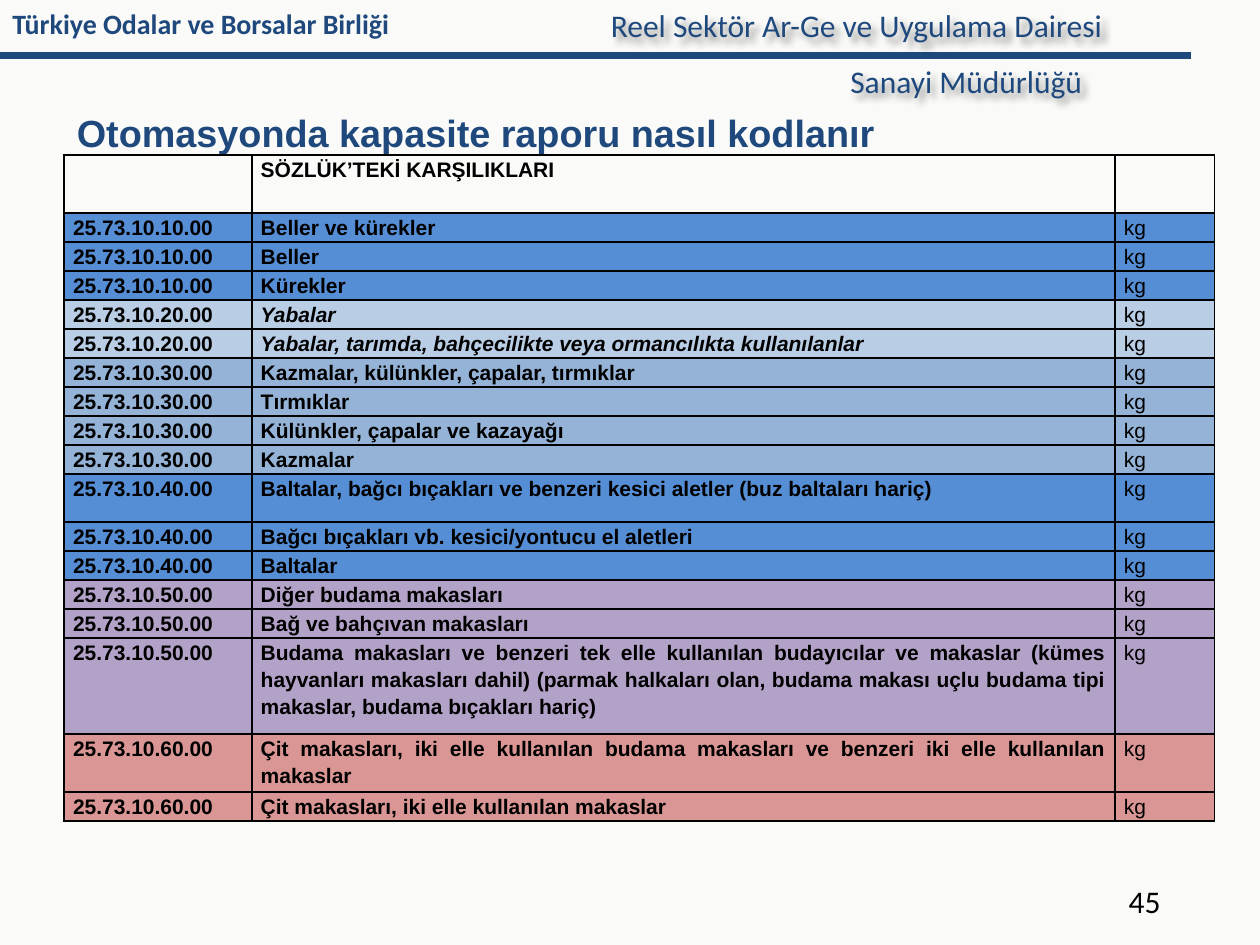
"""Build the slide that lists the dictionary codes of a capacity report."""
import lxml.etree
import pptx
import pptx.dml.color
import pptx.enum.shapes
import pptx.enum.text
import pptx.oxml
import pptx.oxml.ns
import pptx.util

Inches = pptx.util.Inches
ALIGN = pptx.enum.text.PP_ALIGN
ANCHOR = pptx.enum.text.MSO_ANCHOR
AUTO_SIZE = pptx.enum.text.MSO_AUTO_SIZE

COLORS = {
    "background": "FAFAF9", "navy": "1F497D", "black": "000000",
    "blue": "558ED5", "pale": "B9CDE5", "steel": "95B3D7",
    "purple": "B3A2C7", "rose": "D99694",
}
COLUMN_WIDTHS = [1.49, 6.85, 0.79]
ROW_HEIGHT = 0.23
TABLE_HEADING = "SÖZLÜK’TEKİ KARŞILIKLARI"
UNIT = "kg"
GROUPS = [
    ("25.73.10.10.00", "blue", False, ["Beller ve kürekler", "Beller", "Kürekler"]),
    ("25.73.10.20.00", "pale", True, [
        "Yabalar",
        "Yabalar, tarımda, bahçecilikte veya ormancılıkta kullanılanlar"]),
    ("25.73.10.30.00", "steel", False, [
        "Kazmalar, külünkler, çapalar, tırmıklar", "Tırmıklar",
        "Külünkler, çapalar ve kazayağı", "Kazmalar"]),
    ("25.73.10.40.00", "blue", False, [
        "Baltalar, bağcı bıçakları ve benzeri kesici aletler (buz baltaları hariç)",
        "Bağcı bıçakları vb. kesici/yontucu el aletleri", "Baltalar"]),
    ("25.73.10.50.00", "purple", False, [
        "Diğer budama makasları", "Bağ ve bahçıvan makasları",
        "Budama makasları ve benzeri tek elle kullanılan budayıcılar ve makaslar "
        "(kümes hayvanları makasları dahil) (parmak halkaları olan, budama makası "
        "uçlu budama tipi makaslar, budama bıçakları hariç)"]),
    ("25.73.10.60.00", "rose", False, [
        "Çit makasları, iki elle kullanılan budama makasları ve benzeri iki elle "
        "kullanılan makaslar",
        "Çit makasları, iki elle kullanılan makaslar"]),
]
TALL_ROWS = {0: 0.46, 10: 0.38, 15: 0.76, 16: 0.46}


class SlideBuilder:
    """Hold the style and the current slide, and add elements to it."""

    def __init__(self, presentation):
        self.slide = presentation.slides.add_slide(presentation.slide_layouts[5])
        fill = self.slide.background.fill
        fill.solid()
        fill.fore_color.rgb = self.color("background")

    def color(self, name):
        return pptx.dml.color.RGBColor.from_string(COLORS[name])

    def styled_run(self, paragraph, text, color="black", **font_values):
        run = paragraph.add_run()
        run.text = text
        run.font.color.rgb = self.color(color)
        for name, value in font_values.items():
            setattr(run.font, name, value)

    def title(self, text, left, top, width, height):
        shape = self.slide.shapes.title
        box = {"left": left, "top": top, "width": width, "height": height}
        for name, value in box.items():
            setattr(shape, name, Inches(value))
        frame = shape.text_frame
        frame_values = {"vertical_anchor": ANCHOR.BOTTOM, "margin_bottom": 0,
                        "word_wrap": True, "auto_size": AUTO_SIZE.NONE}
        for name, value in frame_values.items():
            setattr(frame, name, value)
        paragraph = frame.paragraphs[0]
        paragraph.alignment = ALIGN.LEFT
        paragraph.line_spacing = 1.15
        self.styled_run(paragraph, text, "navy", name="Arial",
                        size=pptx.util.Pt(21.6), bold=True)

    def text(self, text, left, top, width, height, color="navy", size=18,
             bold=False, shadow=False):
        shape = self.slide.shapes.add_textbox(
            Inches(left), Inches(top), Inches(width), Inches(height))
        frame = shape.text_frame
        frame.word_wrap = True
        frame.auto_size = AUTO_SIZE.SHAPE_TO_FIT_TEXT
        self.styled_run(frame.paragraphs[0], text, color, name="Calibri",
                        size=pptx.util.Pt(size), bold=bold)
        if shadow:
            self.add_shadow(shape)

    def add_shadow(self, shape):
        shape.shadow.inherit = False
        effects = shape.element.spPr.find(pptx.oxml.ns.qn("a:effectLst"))
        effects.append(pptx.oxml.parse_xml(
            f'<a:outerShdw {pptx.oxml.ns.nsdecls("a")} blurRad="50800" '
            'dist="50800" dir="2700000" algn="tl" rotWithShape="0">'
            f'<a:srgbClr val="{COLORS["black"]}"><a:alpha val="40000"/>'
            '</a:srgbClr></a:outerShdw>'))

    def line(self, start_x, start_y, end_x, end_y, width):
        connector = self.slide.shapes.add_connector(
            pptx.enum.shapes.MSO_CONNECTOR.STRAIGHT, Inches(start_x),
            Inches(start_y), Inches(end_x), Inches(end_y))
        connector.line.color.rgb = self.color("navy")
        connector.line.width = pptx.util.Pt(width)
        lxml.etree.SubElement(connector.element.spPr,
                              pptx.oxml.ns.qn("a:effectLst"))

    def add_borders(self, cell):
        properties = cell._tc.get_or_add_tcPr()
        for side in ("lnL", "lnR", "lnT", "lnB"):
            properties.append(pptx.oxml.parse_xml(
                f'<a:{side} {pptx.oxml.ns.nsdecls("a")} w="12700"><a:solidFill>'
                f'<a:srgbClr val="{COLORS["black"]}"/></a:solidFill></a:{side}>'))

    def cell(self, cell, text, fill, alignment, **font_values):
        margins = {"margin_left": 0.07, "margin_right": 0.07,
                   "margin_top": 0, "margin_bottom": 0}
        for name, value in margins.items():
            setattr(cell, name, Inches(value))
        self.add_borders(cell)
        if fill:
            cell.fill.solid()
            cell.fill.fore_color.rgb = self.color(fill)
        else:
            cell.fill.background()
        paragraph = cell.text_frame.paragraphs[0]
        paragraph.alignment = alignment
        paragraph.line_spacing = 1.15
        if text:
            self.styled_run(paragraph, text, name="Arial",
                            size=pptx.util.Pt(12), **font_values)

    def table(self, left, top):
        rows = [(("", TABLE_HEADING, ""), None, False, ALIGN.LEFT)]
        for code, fill, italic, names in GROUPS:
            rows += [((code, name, UNIT), fill, italic, ALIGN.JUSTIFY)
                     for name in names]
        heights = [TALL_ROWS.get(index, ROW_HEIGHT) for index in range(len(rows))]
        table = self.slide.shapes.add_table(
            len(rows), len(COLUMN_WIDTHS), Inches(left), Inches(top),
            Inches(sum(COLUMN_WIDTHS)), Inches(sum(heights))).table
        table.first_row = False
        table.horz_banding = False
        for column, width in zip(table.columns, COLUMN_WIDTHS):
            column.width = Inches(width)
        for row, height, (texts, fill, italic, alignment) in zip(
                table.rows, heights, rows):
            row.height = Inches(height)
            for index, (cell, text) in enumerate(zip(row.cells, texts)):
                self.cell(cell, text, fill, alignment, bold=index < 2,
                          italic=italic and index == 1)


def main():
    presentation = pptx.Presentation()
    presentation.slide_width = Inches(10)
    presentation.slide_height = Inches(7.5)
    builder = SlideBuilder(presentation)
    builder.line(0, 0.44, 9.45, 0.44, 4)
    builder.text("Türkiye Odalar ve Borsalar Birliği", 0, 0, 8.15, 0.37,
                 size=16, bold=True)
    builder.title("Otomasyonda kapasite raporu nasıl kodlanır", 0.51, 0.76, 9, 0.47)
    builder.text("45", 8.86, 6.95, 0.64, 0.4, color="black")
    builder.text("Reel Sektör Ar-Ge ve Uygulama Dairesi", 4.75, 0, 4.41, 0.4,
                 shadow=True)
    builder.text("Sanayi Müdürlüğü", 6.65, 0.44, 2.51, 0.4, shadow=True)
    builder.table(0.51, 1.23)
    presentation.save("out.pptx")


if __name__ == "__main__":
    main()
